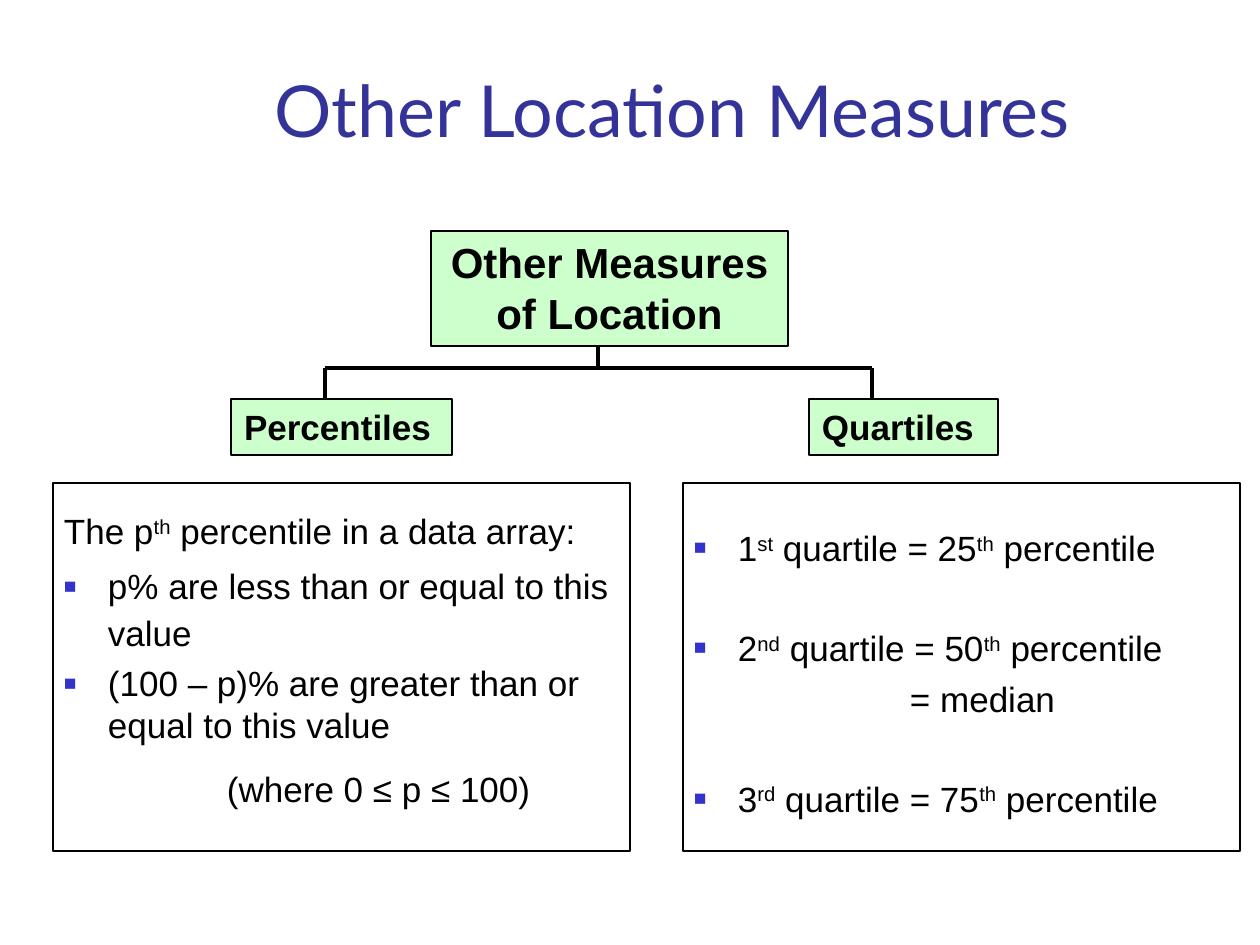
from lxml.etree import SubElement
from pptx import Presentation
from pptx.dml.color import RGBColor
from pptx.enum.shapes import MSO_CONNECTOR, MSO_SHAPE
from pptx.enum.text import MSO_ANCHOR, PP_ALIGN
from pptx.oxml.ns import qn
from pptx.util import Emu, Pt

PX = 914400 / 126
BLACK = RGBColor(0x00, 0x00, 0x00)
TITLE_BLUE = RGBColor(0x33, 0x33, 0x99)
BULLET_BLUE = RGBColor(0x33, 0x33, 0xCC)
GREEN = RGBColor(0xCC, 0xFF, 0xCC)


def px(value):
    return Emu(round(value * PX))


def add_box(place, line_width, inset):
    shape = slide.shapes.add_shape(MSO_SHAPE.RECTANGLE, *map(px, place))
    shape.shadow.inherit = False
    shape.fill.background()
    shape.line.color.rgb = BLACK
    shape.line.width = Pt(line_width)
    text_frame = shape.text_frame
    text_frame.word_wrap = True
    text_frame.vertical_anchor = MSO_ANCHOR.TOP
    text_frame.margin_left = text_frame.margin_right = px(inset)
    text_frame.margin_top = text_frame.margin_bottom = px(6)
    return shape


presentation = Presentation()
presentation.slide_width = px(1260)
presentation.slide_height = px(945)
slide = presentation.slides.add_slide(presentation.slide_layouts[6])

branches = [
    (598, 305, 598, 368),
    (872, 368, 872, 441),
    (325, 368, 872, 368),
    (325, 368, 325, 431),
]
for ends in branches:
    connector = slide.shapes.add_connector(MSO_CONNECTOR.STRAIGHT, *map(px, ends))
    connector.line.color.rgb = BLACK
    connector.line.width = Pt(2.25)
    SubElement(connector._element.spPr, qn("a:effectLst"))

title = slide.shapes.add_textbox(px(136), px(53), px(1073), px(105))
title.text_frame.word_wrap = True
title.text_frame.vertical_anchor = MSO_ANCHOR.BOTTOM
title.text_frame.margin_left = title.text_frame.margin_right = px(11)
title.text_frame.text = "Other Location Measures"
paragraph = title.text_frame.paragraphs[0]
paragraph.alignment = PP_ALIGN.CENTER
paragraph.runs[0].font.name = "Lato"
paragraph.runs[0].font.size = Pt(41)
paragraph.runs[0].font.color.rgb = TITLE_BLUE

headings = [
    ("Other Measures of Location", (431, 231, 357, 115), 24, PP_ALIGN.CENTER),
    ("Percentiles", (231, 399, 221, 56), 20, PP_ALIGN.LEFT),
    ("Quartiles", (809, 399, 189, 56), 20, PP_ALIGN.LEFT),
]
for text, place, size, alignment in headings:
    shape = add_box(place, 1, 13)
    shape.fill.solid()
    shape.fill.fore_color.rgb = GREEN
    shape.text_frame.text = text
    paragraph = shape.text_frame.paragraphs[0]
    paragraph.alignment = alignment
    font = paragraph.runs[0].font
    font.name = "Arial"
    font.size = Pt(size)
    font.bold = True
    font.color.rgb = BLACK

# Each entry: text pieces (odd ones raised), bulleted, left margin, line spacing, space before
details = [
    ((683, 483, 557, 368), [
        (["1", "st", " quartile = 25", "th", " percentile"], True, 44, 1.9, 0),
        (["2", "nd", " quartile = 50", "th", " percentile"], True, 44, 1, 33),
        (["= median"], False, 216, 1, 5),
        (["3", "rd", " quartile = 75", "th", " percentile"], True, 44, 1, 33),
    ]),
    ((53, 483, 577, 368), [
        (["The p", "th", " percentile in a data array:"], False, 0, 1.5, 0),
        (["p% are less than or equal to this value"], True, 44, 1.1, 5),
        (["(100 – p)% are greater than or equal to this value"], True, 44, 1, 5),
        (["(where 0 ≤ p ≤ 100)"], False, 163, 1.3, 5),
    ]),
]
for place, entries in details:
    text_frame = add_box(place, 0.75, 11).text_frame
    for index, (pieces, bulleted, margin, spacing, before) in enumerate(entries):
        paragraph = text_frame.add_paragraph() if index else text_frame.paragraphs[0]
        paragraph.alignment = PP_ALIGN.LEFT
        paragraph.line_spacing = spacing
        paragraph.space_before = Pt(before)
        properties = paragraph._p.get_or_add_pPr()
        properties.set("marL", str(px(margin)))
        if bulleted:
            properties.set("indent", str(-px(margin)))
            color = SubElement(properties, qn("a:buClr"))
            SubElement(color, qn("a:srgbClr"), val=str(BULLET_BLUE))
            SubElement(properties, qn("a:buSzPct"), val="60000")
            SubElement(properties, qn("a:buFont"), typeface="Arial")
            SubElement(properties, qn("a:buChar"), char="■")
        for position, piece in enumerate(pieces):
            run = paragraph.add_run()
            run.text = piece
            run.font.name = "Arial"
            run.font.size = Pt(20)
            run.font.color.rgb = BLACK
            if position % 2:
                run._r.get_or_add_rPr().set("baseline", "30000")

presentation.save("out.pptx")
